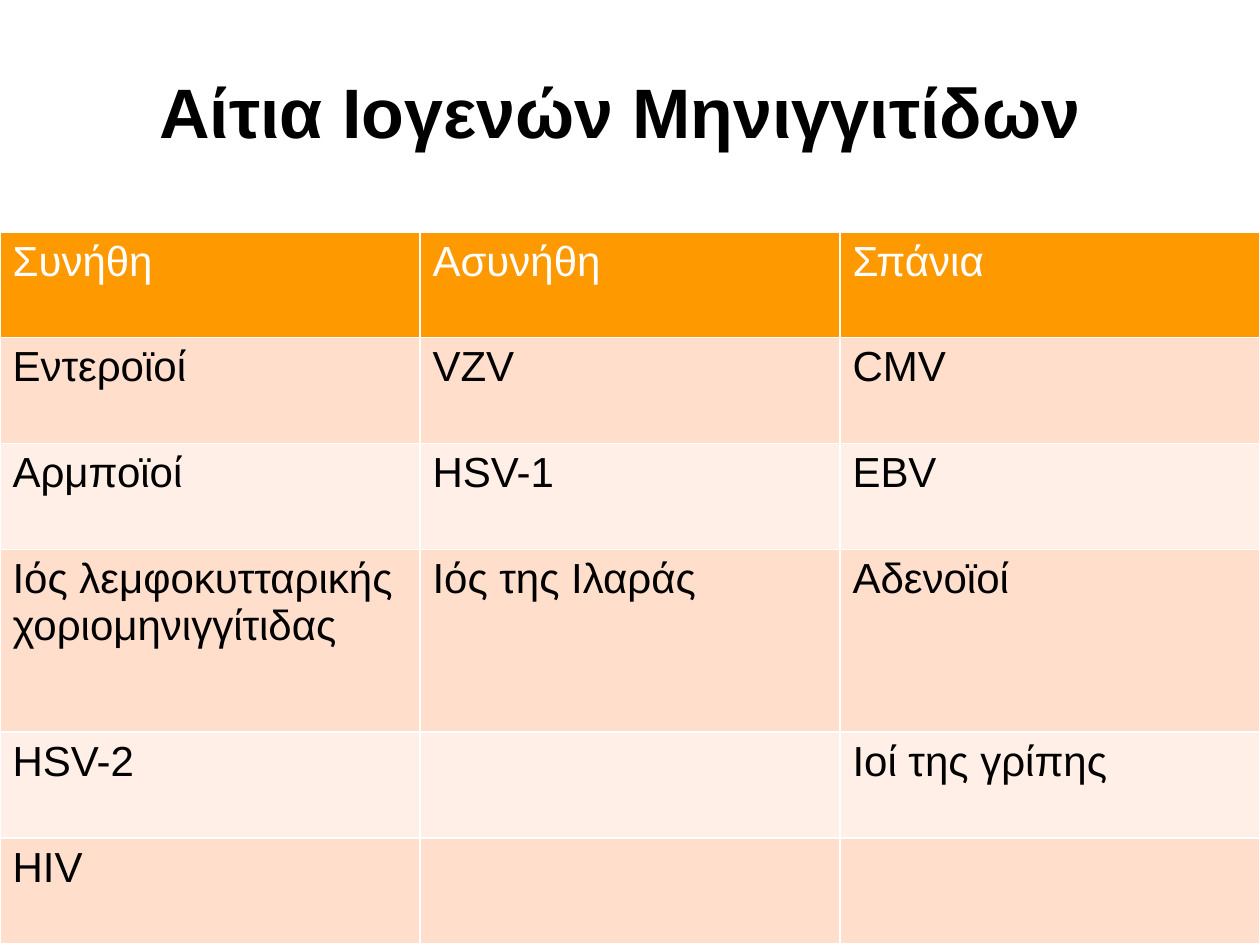
from dataclasses import dataclass

from lxml.etree import SubElement
from pptx import Presentation
from pptx.dml.color import RGBColor as Color
from pptx.enum.text import MSO_ANCHOR as Anchor, PP_ALIGN as Align
from pptx.oxml.ns import qn
from pptx.util import Inches, Pt


@dataclass(frozen=True)
class Theme:
    font: str = "Arial"
    title_size: int = 40
    table_size: int = 24
    text: str = "000000"
    header_text: str = "FFFFFF"
    header_fill: str = "FF9900"
    band_fills: tuple = ("FFDECC", "FFEFE7")
    border: str = "FFFFFF"
    border_width: int = 1


class SlideBuilder:
    def __init__(self, slide, theme):
        self.slide = slide
        self.theme = theme

    def style(self, paragraph, size, color, bold=False):
        font = paragraph.font
        font.name, font.size, font.bold = self.theme.font, Pt(size), bold
        font.color.rgb = Color.from_string(color)

    def title(self, text, left, top, width, height):
        box = self.slide.shapes.add_textbox(left, top, width, height)
        frame = box.text_frame
        frame.word_wrap = True
        frame.vertical_anchor = Anchor.MIDDLE
        paragraph = frame.paragraphs[0]
        paragraph.text = text
        paragraph.alignment = Align.CENTER
        self.style(paragraph, self.theme.title_size, self.theme.text, bold=True)

    def borders(self, cell):
        properties = cell._tc.get_or_add_tcPr()
        for side in ("a:lnL", "a:lnR", "a:lnT", "a:lnB"):
            line = SubElement(properties, qn(side), w=str(Pt(self.theme.border_width)))
            fill = SubElement(line, qn("a:solidFill"))
            SubElement(fill, qn("a:srgbClr"), val=self.theme.border)

    def table(self, rows, row_heights, left, top, width):
        theme = self.theme
        column_count = len(rows[0])
        table = self.slide.shapes.add_table(
            len(rows), column_count, left, top, width, sum(row_heights)
        ).table
        for column in table.columns:
            column.width = width // column_count
        for index, (values, height) in enumerate(zip(rows, row_heights)):
            table.rows[index].height = height
            is_header = index == 0
            fill = theme.header_fill if is_header else theme.band_fills[(index - 1) % 2]
            color = theme.header_text if is_header else theme.text
            for cell, value in zip(table.rows[index].cells, values):
                self.borders(cell)
                cell.fill.solid()
                cell.fill.fore_color.rgb = Color.from_string(fill)
                cell.text = value
                self.style(cell.text_frame.paragraphs[0], theme.table_size, color)


def main():
    presentation = Presentation()
    presentation.slide_width, presentation.slide_height = Inches(10), Inches(7.5)
    slide = presentation.slides.add_slide(presentation.slide_layouts[6])
    builder = SlideBuilder(slide, Theme())

    # Title
    builder.title("Αίτια Ιογενών Μηνιγγιτίδων",
                  Inches(0.67), Inches(0.25), Inches(8.5), Inches(1.25))

    # Table of causes by frequency
    causes = [
        ("Συνήθη", "Ασυνήθη", "Σπάνια"),
        ("Εντεροϊοί", "VZV", "CMV"),
        ("Αρμποϊοί", "HSV-1", "EBV"),
        ("Ιός λεμφοκυτταρικής χοριομηνιγγίτιδας", "Ιός της Ιλαράς", "Αδενοϊοί"),
        ("HSV-2", "", "Ιοί της γρίπης"),
        ("HIV", "", ""),
    ]
    row_heights = [Inches(0.84)] * len(causes)
    row_heights[3] = Inches(1.45)
    builder.table(causes, row_heights, Inches(0), Inches(1.84), Inches(10))

    presentation.save("out.pptx")


if __name__ == "__main__":
    main()
